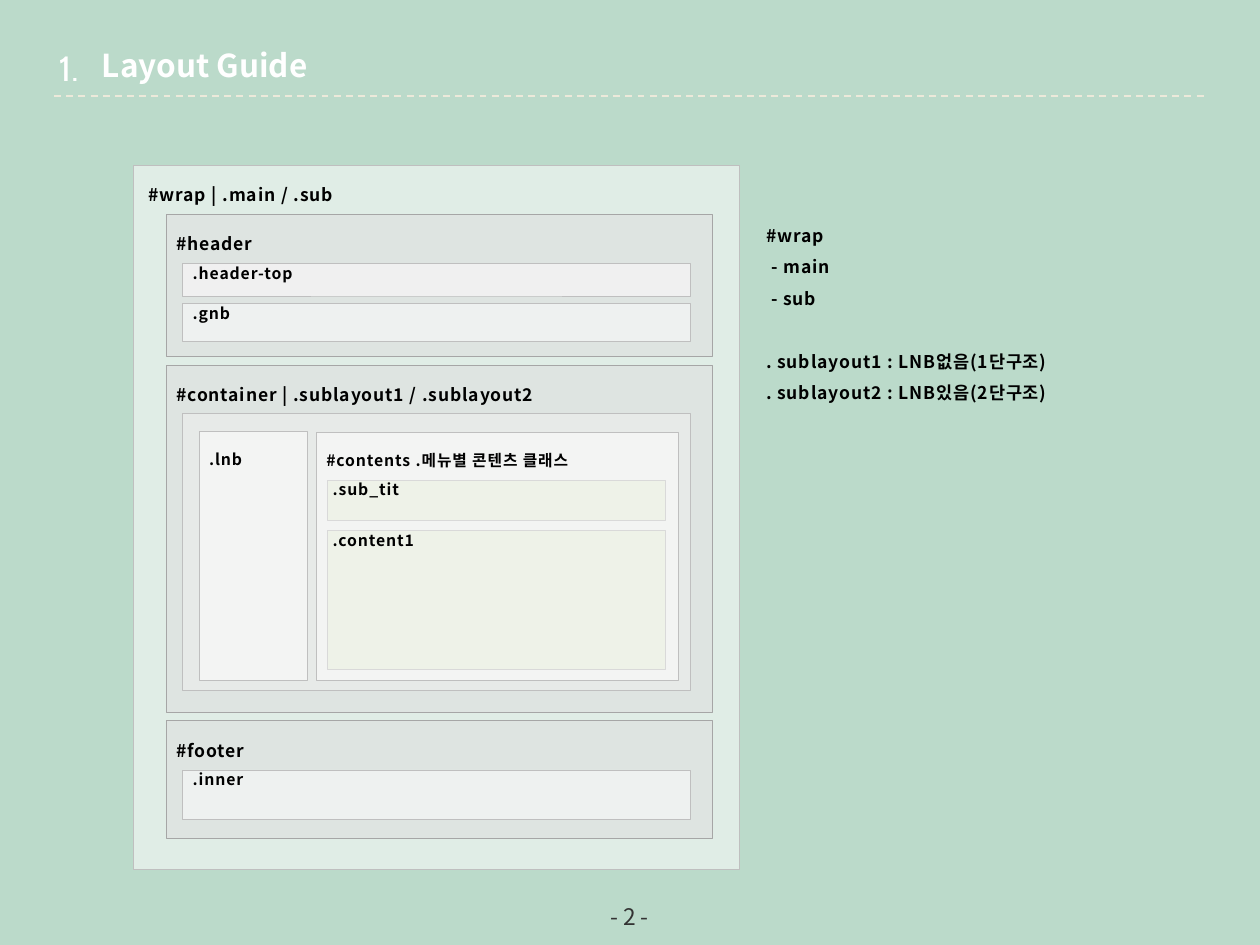
from lxml import etree
from pptx import Presentation
from pptx.dml.color import RGBColor
from pptx.enum.dml import MSO_LINE
from pptx.enum.shapes import MSO_CONNECTOR, MSO_SHAPE
from pptx.enum.text import MSO_ANCHOR, PP_ALIGN
from pptx.oxml.ns import qn
from pptx.util import Inches, Pt

RECTANGLE = MSO_SHAPE.RECTANGLE
STRAIGHT = MSO_CONNECTOR.STRAIGHT
DASH = MSO_LINE.DASH
TOP, MIDDLE = MSO_ANCHOR.TOP, MSO_ANCHOR.MIDDLE
LEFT, CENTER = PP_ALIGN.LEFT, PP_ALIGN.CENTER

COLORS = {
    "background": "BBDACA", "rule": "ECE9DA", "white": "FFFFFF", "black": "000000",
    "page": "333333", "wrap": "FAFAFA", "section": "DDDDDD", "panel": "F0F0F0",
    "content": "EBF1DE", "edge": "BFBFBF", "section edge": "A6A6A6",
    "content edge": "D9D9D9",
}
SANS, NUMERAL = "Noto Sans CJK KR", "Cabin"

# Kind of region: fill, opacity in percent, outline
STYLES = {
    "wrap": ("wrap", 60, "edge"),
    "section": ("section", 50, "section edge"),
    "bar": ("panel", 100, "edge"),
    "panel": ("panel", 50, "edge"),
    "light": ("white", 50, "edge"),
    "content": ("content", 50, "content edge"),
}

STEP = 0.04        # one indent step, and the base inset
DROP = 0.15        # room above the label of a region that holds others
SECTION_X, SECTION_W = 1.32, 4.33
INNER_X, INNER_W = 1.45, 4.03
CONTENT_X, CONTENT_W = 2.6, 2.68

# Label, kind, (left, top, width, height), label size, indent steps, room above
REGIONS = [
    ("#wrap | .main / .sub", "wrap", (1.06, 1.31, 4.81, 5.59), 10, 2, DROP),
    ("#header", "section", (SECTION_X, 1.7, SECTION_W, 1.13), 10, 1, DROP),
    ("#container | .sublayout1 / .sublayout2", "section",
     (SECTION_X, 2.9, SECTION_W, 2.75), 10, 1, DROP),
    ("#footer", "section", (SECTION_X, 5.72, SECTION_W, 0.93), 10, 1, DROP),
    (".header-top", "bar", (INNER_X, 2.09, INNER_W, 0.26), 9, 1, 0),
    ("", "panel", (INNER_X, 3.28, INNER_W, 2.2), 9, 0, 0),
    ("#contents .메뉴별 콘텐츠 클래스", "light", (2.51, 3.43, 2.87, 1.97), 9, 1, DROP),
    (".lnb", "light", (1.58, 3.42, 0.86, 1.98), 9, 1, DROP),
    (".inner", "light", (INNER_X, 6.11, INNER_W, 0.39), 9, 1, 0),
    (".sub_tit", "content", (CONTENT_X, 3.81, CONTENT_W, 0.32), 9, 0, 0),
    (".content1", "content", (CONTENT_X, 4.21, CONTENT_W, 1.1), 9, 0, 0),
    (".gnb", "light", (INNER_X, 2.41, INNER_W, 0.3), 9, 1, 0),
]

# Text, indent steps, points of space before
NOTES = [
    ("#wrap", 0, 0),
    ("- main", 1, 0),
    ("- sub", 1, 0),
    (". sublayout1 : LNB없음(1단구조)", 0, 18),
    (". sublayout2 : LNB있음(2단구조)", 0, 0),
]

# Text, box, insets (left, top, right, bottom), anchor, alignment, font format
DEFAULT_INSETS = (0.1, 0.05, 0.1, 0.05)
HEADINGS = [
    ("- 2 -", (3.83, 7.12, 2.33, 0.31), (0, 0, 0, 0), MIDDLE, CENTER,
     {"name": SANS, "size": Pt(13), "color": "page"}),
    ("1.", (0.27, 0.32, 0.55, 0.44), DEFAULT_INSETS, TOP, CENTER,
     {"name": NUMERAL, "size": Pt(20), "color": "white"}),
    ("Layout Guide", (0.71, 0.32, 4.61, 0.4), DEFAULT_INSETS, TOP, LEFT,
     {"name": SANS, "size": Pt(18), "bold": True, "color": "white"}),
]


def rgb(name):
    return RGBColor.from_string(COLORS[name])


def label_format(size):
    return {"name": SANS, "size": Pt(size), "bold": True, "color": "black"}


def write(paragraph, text, font_format, align=LEFT, spacing=None):
    """Add one run; spacing is the letter spacing in hundredths of a point."""
    paragraph.alignment = align
    run = paragraph.add_run()
    run.text = text
    for attribute, value in font_format.items():
        if attribute == "color":
            run.font.color.rgb = rgb(value)
        else:
            setattr(run.font, attribute, value)
    properties = run.font._element
    etree.SubElement(properties, qn("a:ea"), typeface=font_format["name"])
    if spacing:
        properties.set("spc", str(spacing))


def set_frame(frame, insets, anchor=TOP, wrap=True):
    frame.word_wrap = wrap
    frame.vertical_anchor = anchor
    for side, inset in zip(("left", "top", "right", "bottom"), insets):
        setattr(frame, f"margin_{side}", Inches(inset))


def add_text_frame(slide, box, insets, anchor=TOP, wrap=True):
    frame = slide.shapes.add_textbox(*map(Inches, box)).text_frame
    set_frame(frame, insets, anchor, wrap)
    return frame


def add_region(slide, label, kind, box, size, steps, room):
    fill, opacity, edge = STYLES[kind]
    region = slide.shapes.add_shape(RECTANGLE, *map(Inches, box))
    region.shadow.inherit = False
    region.fill.solid()
    region.fill.fore_color.rgb = rgb(fill)
    if opacity < 100:
        color = region._element.spPr.find(qn("a:solidFill")).find(qn("a:srgbClr"))
        etree.SubElement(color, qn("a:alpha"), val=str(opacity * 1000))
    region.line.color.rgb = rgb(edge)
    region.line.width = Pt(0.25)
    if label:
        set_frame(region.text_frame, (STEP * (1 + steps), room, 0, 0))
        write(region.text_frame.paragraphs[0], label, label_format(size), spacing=50)


def add_rule(slide):
    rule = slide.shapes.add_connector(
        STRAIGHT, Inches(0.43), Inches(0.76), Inches(9.57), Inches(0.76))
    rule.line.color.rgb = rgb("rule")
    rule.line.width = Pt(1)
    rule.line.dash_style = DASH
    etree.SubElement(rule._element.spPr, qn("a:effectLst"))


def add_notes_column(slide):
    frame = add_text_frame(slide, (6.04, 1.7, 3.12, 4.33), (STEP, 0, 0, 0), wrap=False)
    for index, (text, steps, before) in enumerate(NOTES):
        paragraph = frame.add_paragraph() if index else frame.paragraphs[0]
        paragraph.line_spacing = 1.5
        if before:
            paragraph.space_before = Pt(before)
        if steps:
            paragraph._p.get_or_add_pPr().set("marL", str(Inches(STEP * steps)))
        write(paragraph, text, label_format(10), spacing=50)


def main():
    deck = Presentation()
    deck.slide_width, deck.slide_height = Inches(10), Inches(7.5)
    slide = deck.slides.add_slide(deck.slide_layouts[6])
    slide.background.fill.solid()
    slide.background.fill.fore_color.rgb = rgb("background")

    add_rule(slide)
    for text, box, insets, anchor, align, font_format in HEADINGS:
        frame = add_text_frame(slide, box, insets, anchor)
        write(frame.paragraphs[0], text, font_format, align)
    for region in REGIONS:
        add_region(slide, *region)
    add_notes_column(slide)
    deck.save("out.pptx")


if __name__ == "__main__":
    main()
